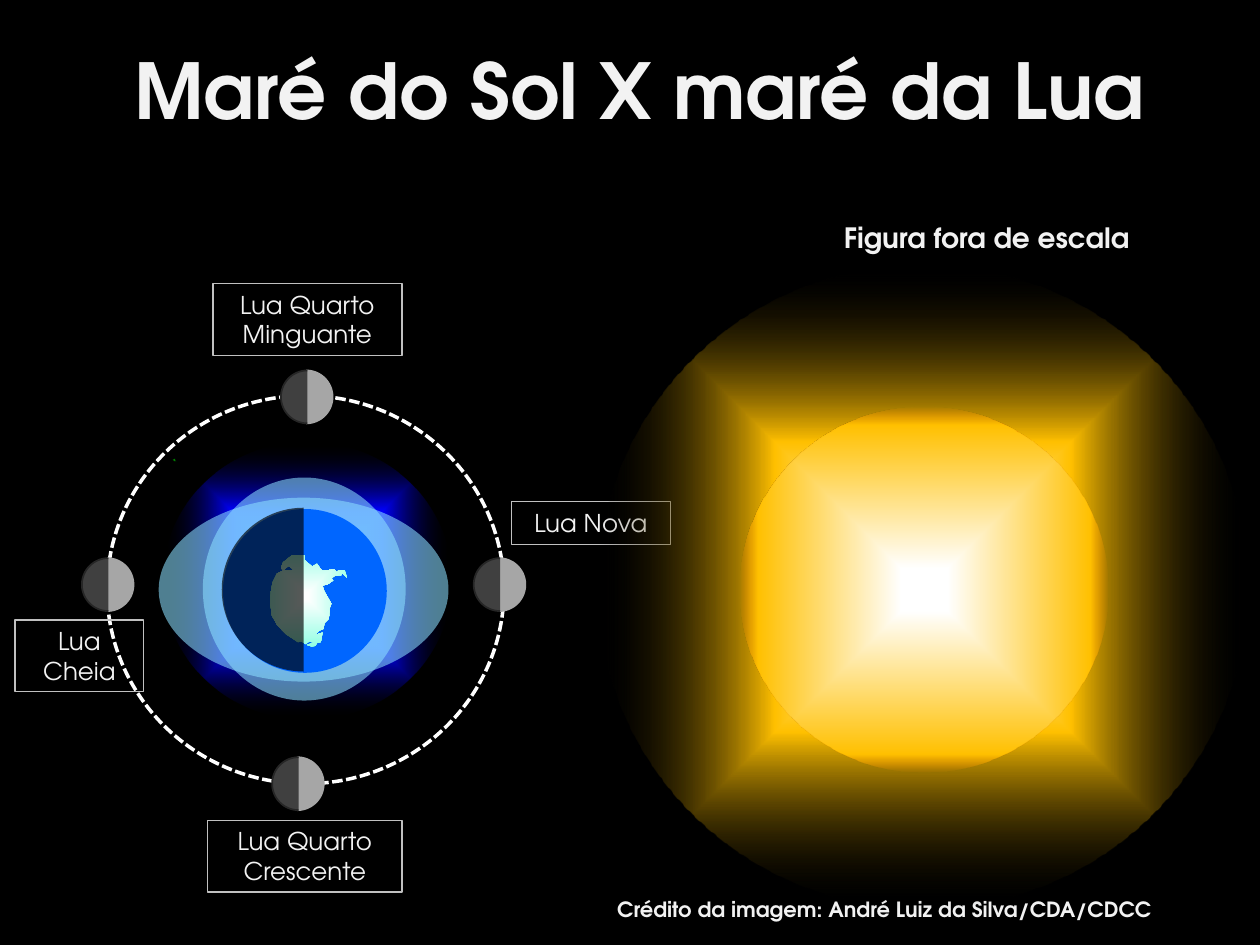
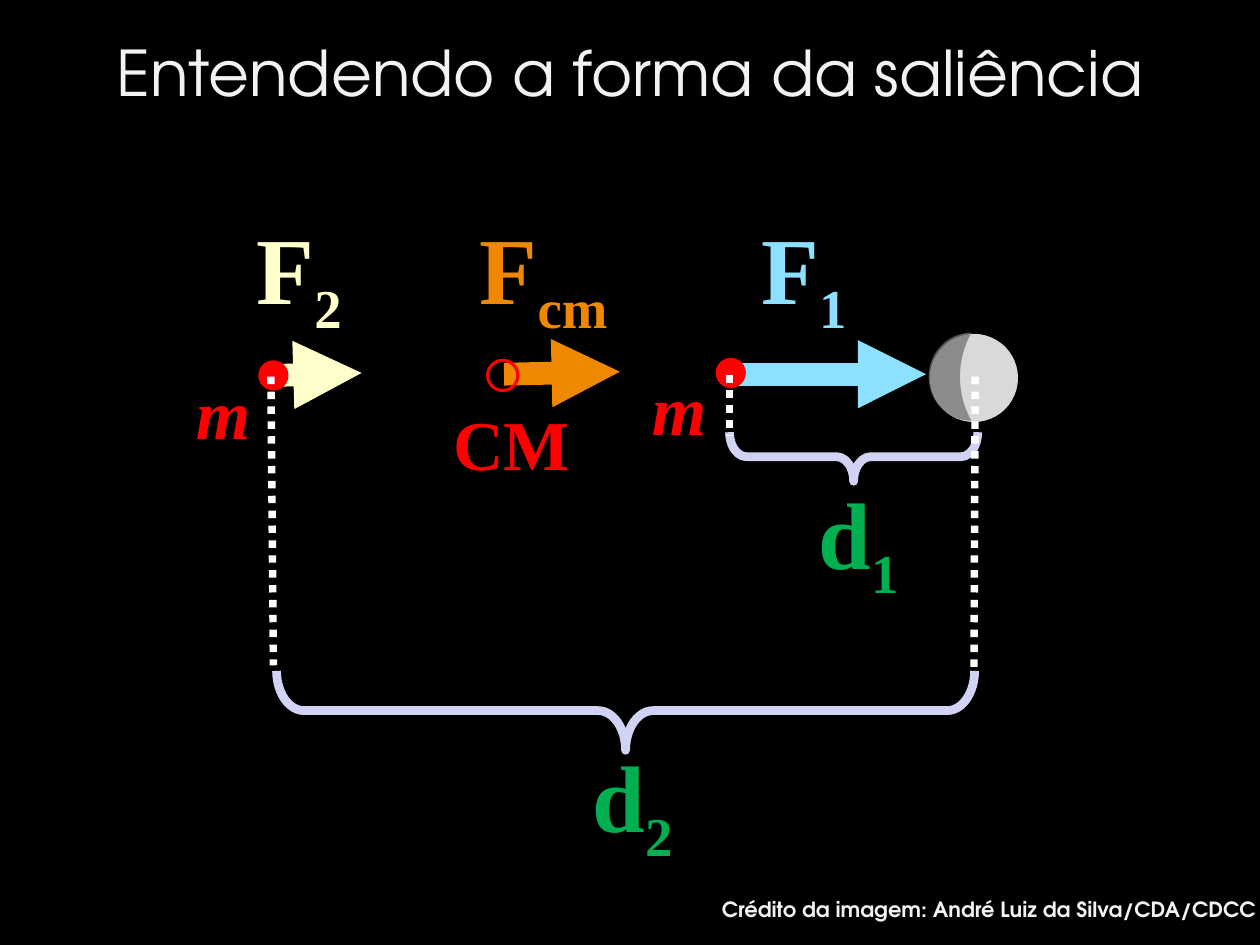
from math import cos, pi, sin

from lxml import etree
from pptx import Presentation
from pptx.dml.color import RGBColor
from pptx.enum.dml import MSO_LINE
from pptx.enum.shapes import MSO_CONNECTOR, MSO_SHAPE
from pptx.enum.text import MSO_ANCHOR, MSO_AUTO_SIZE, PP_ALIGN
from pptx.oxml import parse_xml
from pptx.oxml.ns import nsdecls, qn
from pptx.util import Inches, Pt

COLORS = {
    "black": "000000", "white": "FFFFFF", "text": "F2F2F2", "box": "C0C0C0",
    "ocean": "0066FF", "blue": "0000FF", "tide": "8BE1FF", "ice": "85FFE0",
    "green": "008000", "lit": "A6A6A6", "dark": "404040", "rim": "262626",
    "sun": "FFC000", "orange": "EE8800", "cream": "FFFFCC", "red": "FF0000",
    "brace": "D2D2F4", "distance": "00B050", "moon": "D9D9D9", "shade": "707070",
}
SANS, SERIF = "TeX Gyre Adventor", "Times New Roman"
CREDIT = "Crédito da imagem: André Luiz da Silva/CDA/CDCC"
MOON_RADIUS = 0.21
# Antarctica's coast, before it is turned
LAND = [
    (2.54, 5.07), (2.58, 5.07), (2.6, 5.05), (2.64, 5.05), (2.65, 5.02), (2.69, 5),
    (2.65, 5.05), (2.69, 5.04), (2.71, 5.02), (2.71, 4.99), (2.73, 4.97), (2.7, 4.9),
    (2.66, 4.95), (2.67, 4.9), (2.69, 4.87), (2.67, 4.83), (2.68, 4.78), (2.64, 4.71),
    (2.63, 4.67), (2.53, 4.62), (2.49, 4.59), (2.52, 4.56), (2.54, 4.51), (2.52, 4.5),
    (2.53, 4.47), (2.57, 4.44), (2.57, 4.42), (2.62, 4.43), (2.57, 4.39), (2.53, 4.42),
    (2.53, 4.44), (2.5, 4.43), (2.43, 4.49), (2.41, 4.49), (2.36, 4.47), (2.34, 4.51),
    (2.26, 4.5), (2.24, 4.47), (2.16, 4.52), (2.14, 4.58), (2.13, 4.61), (2.14, 4.65),
    (2.15, 4.66), (2.17, 4.65), (2.18, 4.61), (2.23, 4.61), (2.22, 4.63), (2.17, 4.66),
    (2.14, 4.71), (2.15, 4.79), (2.18, 4.86), (2.23, 4.94), (2.29, 5.01), (2.37, 5.05),
    (2.46, 5.07),
]
ISLETS = [
    [(1.38, 3.66), (1.4, 3.66), (1.38, 3.65)],
    [(1.37, 3.65), (1.39, 3.66), (1.39, 3.64)],
]


def rgb(name):
    return RGBColor.from_string(COLORS[name])


def style(sp, fill=None, line=None, width=1, opacity=100):
    sp.shadow.inherit = False
    if fill:
        sp.fill.solid()
        sp.fill.fore_color.rgb = rgb(fill)
        if opacity < 100:
            clr = sp._element.spPr.find(qn("a:solidFill"))[0]
            etree.SubElement(clr, qn("a:alpha"), val=str(opacity * 1000))
    else:
        sp.fill.background()
    if line:
        sp.line.color.rgb = rgb(line)
        sp.line.width = Pt(width)
    else:
        sp.line.fill.background()
    return sp


def add_preset(s, kind, box, **look):
    return style(s.shapes.add_shape(kind, *map(Inches, box)), **look)


def add_ellipse(s, box, **look):
    return add_preset(s, MSO_SHAPE.OVAL, box, **look)


def set_glow(sp, stops):
    """Fill from the centre outwards; each stop is (percent, colour, opacity)."""
    gs = "".join(
        f'<a:gs pos="{pos * 1000}"><a:srgbClr val="{COLORS[name]}">'
        f'<a:alpha val="{opacity * 1000}"/></a:srgbClr></a:gs>'
        for pos, name, opacity in stops)
    grad = parse_xml(
        f'<a:gradFill {nsdecls("a")} rotWithShape="1"><a:gsLst>{gs}</a:gsLst>'
        '<a:path path="shape"><a:fillToRect l="50000" t="50000" r="50000" b="50000"/>'
        '</a:path></a:gradFill>')
    sp.fill.gradient()
    spPr = sp._element.spPr
    spPr.replace(spPr.find(qn("a:gradFill")), grad)


def add_outline(s, points, close=True, **look):
    emu = [(Inches(x), Inches(y)) for x, y in points]
    fb = s.shapes.build_freeform(*emu[0])
    fb.add_line_segments(emu[1:], close=close)
    return style(fb.convert_to_shape(), **look)


def add_half_disc(s, cx, cy, radius, side, **look):
    """Half disc left (side -1) or right (side 1) of cx, with no line on the diameter."""
    arc = [pi * i / 48 for i in range(49)]
    points = [(cx + side * radius * sin(a), cy - radius * cos(a)) for a in arc]
    return add_outline(s, points, close=False, **look)


def add_moon(s, cx, cy):
    add_half_disc(s, cx, cy, MOON_RADIUS, 1, fill="lit", line="lit")
    add_half_disc(s, cx + 0.01, cy, MOON_RADIUS, -1, fill="dark", line="rim")


def write(sp, lines, size, color="text", font=SANS, bold=False, italic=False,
          align=PP_ALIGN.CENTER, sub=None, wrap=True, grow=True):
    tf = sp.text_frame
    tf.word_wrap = wrap
    tf.vertical_anchor = MSO_ANCHOR.TOP
    tf.auto_size = MSO_AUTO_SIZE.SHAPE_TO_FIT_TEXT if grow else MSO_AUTO_SIZE.NONE
    for i, line in enumerate(lines):
        p = tf.add_paragraph() if i else tf.paragraphs[0]
        p.alignment = align
        for text in filter(None, (line, sub)):
            r = p.add_run()
            r.text = text
            r.font.name, r.font.size = font, Pt(size)
            r.font.bold, r.font.italic = bold, italic
            r.font.color.rgb = rgb(color)
            if text == sub:
                r._r.get_or_add_rPr().set("baseline", "-25000")


def add_text(s, box, text, size, **look):
    write(s.shapes.add_textbox(*map(Inches, box)), [text], size, **look)


def add_title(s, text, left, top, size, bold=False):
    add_text(s, (left, top, 10, 1.25), text, size, bold=bold, grow=False)


def add_credit(s, left, width):
    add_text(s, (left, 7.07, width, 0.3), CREDIT, 12, bold=True, align=PP_ALIGN.LEFT)


def add_phase_label(s, box, *lines):
    sp = add_preset(s, MSO_SHAPE.RECTANGLE, box, line="box", width=0.75)
    write(sp, lines, 14)


def add_symbol(s, left, top, width, text, sub, color):
    add_text(s, (left, top, width, 1.01), text, 54, color=color, font=SERIF,
             bold=True, sub=sub)


def add_red_label(s, left, top, text, italic=False):
    add_text(s, (left, top, 1.26, 0.77), text, 40, color="red", font=SERIF,
             bold=True, italic=italic)


def add_line(s, start, end, color, width):
    cn = s.shapes.add_connector(MSO_CONNECTOR.STRAIGHT, *map(Inches, start + end))
    cn.line.color.rgb = rgb(color)
    cn.line.width = Pt(width)
    etree.SubElement(cn._element.spPr, qn("a:effectLst"))
    return cn


def add_force(s, start, end, color):
    cn = add_line(s, start, end, color, 13)
    etree.SubElement(cn.line._get_or_add_ln(), qn("a:tailEnd"), type="triangle")


def add_dotted(s, start, end):
    add_line(s, start, end, "white", 4.25).line.dash_style = MSO_LINE.ROUND_DOT


def add_brace(s, box):
    sp = add_preset(s, MSO_SHAPE.RIGHT_BRACE, box, line="brace", width=5)
    sp.rotation = 90
    sp.adjustments[0], sp.adjustments[1] = 0.346, 0.5


def add_slide(prs):
    s = prs.slides.add_slide(prs.slide_layouts[6])
    s.background.fill.solid()
    s.background.fill.fore_color.rgb = rgb("black")
    return s


def draw_earth(s):
    halo = add_ellipse(s, (1.29, 3.51, 2.29, 2.2))
    set_glow(halo, [(0, "ocean", 100), (50, "blue", 100), (100, "black", 0)])
    solar_tide = add_ellipse(s, (1.53, 3.87, 1.77, 1.61), fill="tide", opacity=57)
    solar_tide.rotation = 270
    add_ellipse(s, (1.26, 3.95, 2.3, 1.46), fill="tide", opacity=57)
    add_ellipse(s, (1.77, 4.04, 1.3, 1.3), fill="ocean")
    land = add_outline(s, LAND)
    land.rotation = 33.7
    set_glow(land, [(3, "white", 100), (100, "ice", 100)])
    for islet in ISLETS:
        add_outline(s, islet, fill="green")
    add_half_disc(s, 2.41, 4.68, 0.65, -1, fill="black", opacity=65)


def draw_sun(s):
    corona = add_ellipse(s, (4.74, 2.1, 5.16, 5.11))
    set_glow(corona, [(7, "white", 100), (45, "sun", 100), (100, "black", 0)])
    disc = add_ellipse(s, (5.87, 3.23, 2.93, 2.9))
    set_glow(disc, [(12, "white", 100), (90, "sun", 100), (100, "orange", 0)])


def build_tides_slide(prs):
    s = add_slide(prs)
    draw_earth(s)
    add_title(s, "Maré do Sol X maré da Lua", 0.08, 0.29, 44, bold=True)
    orbit = add_ellipse(s, (0.85, 3.14, 3.15, 3.08), line="white", width=2)
    orbit.line.dash_style = MSO_LINE.SQUARE_DOT
    for cx, cy in [(2.43, 3.15), (0.85, 4.64), (2.36, 6.22), (3.96, 4.64)]:
        add_moon(s, cx, cy)
    add_phase_label(s, (1.69, 2.25, 1.5, 0.57), "Lua Quarto", "Minguante")
    add_phase_label(s, (0.12, 4.92, 1.02, 0.57), "Lua", "Cheia")
    add_phase_label(s, (1.65, 6.51, 1.54, 0.57), "Lua Quarto", "Crescente")
    add_phase_label(s, (4.06, 3.98, 1.26, 0.34), "Lua Nova")
    add_credit(s, 4.8, 5.28)
    add_text(s, (6.57, 1.7, 2.52, 0.37), "Figura fora de escala", 16, bold=True, wrap=False)
    draw_sun(s)


def build_forces_slide(prs):
    s = add_slide(prs)
    add_force(s, (5.78, 2.97), (7.35, 2.97), "tide")
    add_brace(s, (6.58, 2.64, 0.39, 1.97))
    add_brace(s, (4.65, 2.87, 0.63, 5.54))
    add_symbol(s, 6.16, 3.72, 1.31, "d", "1", "distance")
    add_symbol(s, 4.03, 5.81, 1.98, "d", "2", "distance")
    add_symbol(s, 1.72, 1.62, 1.31, "F", "2", "cream")
    add_symbol(s, 5.39, 1.62, 1.98, "F", "1", "tide")
    add_title(s, "Entendendo a forma da saliência", 0, 0.22, 36)
    add_credit(s, 5.63, 4.45)
    add_force(s, (2.18, 2.98), (2.87, 2.96), "cream")
    add_ellipse(s, (7.38, 2.65, 0.7, 0.7), fill="moon")
    night = add_preset(s, MSO_SHAPE.MOON, (7.37, 2.64, 0.34, 0.7), fill="shade", opacity=74)
    night.adjustments[0] = 0.732
    add_ellipse(s, (5.68, 2.84, 0.24, 0.24), fill="red")
    add_ellipse(s, (2.05, 2.86, 0.24, 0.24), fill="red")
    add_dotted(s, (2.15, 2.99), (2.17, 5.28))
    add_dotted(s, (5.79, 2.98), (5.79, 3.46))
    add_dotted(s, (7.74, 2.99), (7.73, 5.31))
    add_red_label(s, 3.43, 3.13, "CM")
    add_red_label(s, 1.14, 2.88, "m", italic=True)
    add_red_label(s, 4.76, 2.85, "m", italic=True)
    add_symbol(s, 3.66, 1.62, 1.31, "F", "cm", "orange")
    add_force(s, (4, 2.97), (4.92, 2.95), "orange")
    add_ellipse(s, (3.87, 2.86, 0.24, 0.24), line="red", width=1.75)


def main():
    prs = Presentation()
    prs.slide_width, prs.slide_height = Inches(10), Inches(7.5)
    build_tides_slide(prs)
    build_forces_slide(prs)
    prs.save("out.pptx")


if __name__ == "__main__":
    main()
